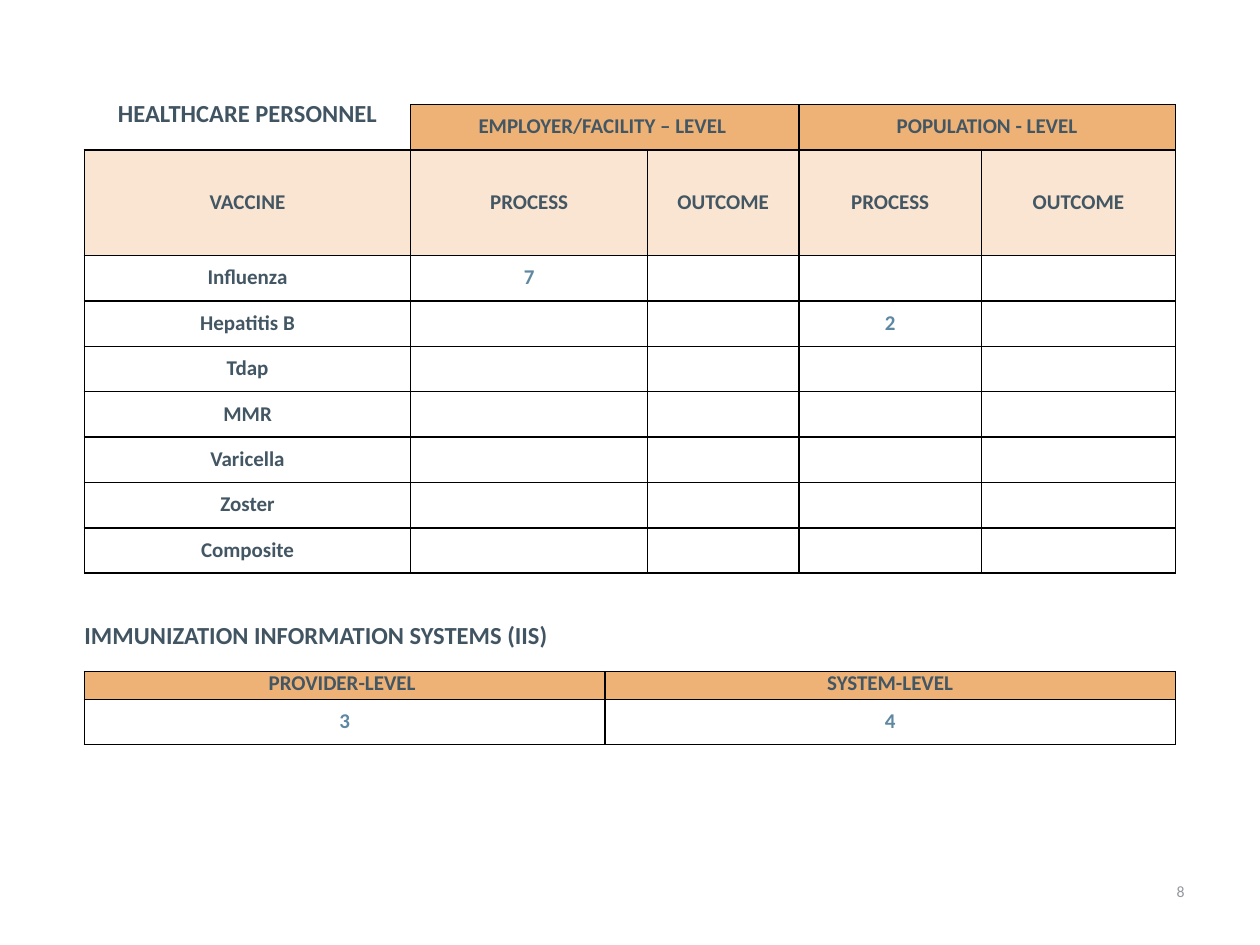
"""Build the slide of vaccine measures for healthcare personnel and information systems."""
from dataclasses import dataclass

import pptx
import pptx.dml.color
import pptx.enum.text
import pptx.oxml
import pptx.oxml.ns
import pptx.util

Inches = pptx.util.Inches
Pt = pptx.util.Pt
RGBColor = pptx.dml.color.RGBColor
ALIGN = pptx.enum.text.PP_ALIGN
ANCHOR = pptx.enum.text.MSO_ANCHOR

HEADING = RGBColor(0x41, 0x54, 0x62)
LABEL = RGBColor(0x43, 0x56, 0x63)
COUNT = RGBColor(0x5E, 0x88, 0xA2)
PAGE_GRAY = RGBColor(0x93, 0x99, 0x9E)
ORANGE = RGBColor(0xEE, 0xB2, 0x76)
PEACH = RGBColor(0xF9, 0xE5, 0xD1)
BLACK = RGBColor(0, 0, 0)

LEFT = 0.67
ROW_HEIGHT = 0.36
VACCINES = ("Influenza", "Hepatitis B", "Tdap", "MMR", "Varicella", "Zoster", "Composite")
MEASURES = ("PROCESS", "OUTCOME")


@dataclass(frozen=True)
class Grid:
    top: float
    columns: tuple[float, ...]
    heights: tuple[float, ...]
    rows: tuple[tuple[str, ...], ...]
    fills: tuple[RGBColor, ...]


PERSONNEL = Grid(
    top=0.83,
    columns=(2.59, 1.88, 1.2, 1.45, 1.54),
    heights=(ROW_HEIGHT, 0.84) + (ROW_HEIGHT,) * len(VACCINES),
    rows=(
        ("HEALTHCARE PERSONNEL", "EMPLOYER/FACILITY – LEVEL ", "", "POPULATION - LEVEL", ""),
        ("VACCINE", *MEASURES, *MEASURES),
        ("Influenza", "7", "", "", ""),
        ("Hepatitis B", "", "", "2", ""),
        *((vaccine, "", "", "", "") for vaccine in VACCINES[2:]),
    ),
    fills=(ORANGE, PEACH),
)
SYSTEMS = Grid(
    top=5.33,
    columns=(4.13, 4.53),
    heights=(0.22, ROW_HEIGHT),
    rows=(("PROVIDER-LEVEL ", "SYSTEM-LEVEL"), ("3", "4")),
    fills=(ORANGE,),
)


def write(frame, text: str, *, size: float = 12, color: RGBColor = LABEL, bold: bool = True,
          align=ALIGN.CENTER, spacing: float | None = None) -> None:
    """Write one formatted paragraph into a text frame."""
    paragraph = frame.paragraphs[0]
    paragraph.alignment = align
    if spacing:
        paragraph.line_spacing = Pt(spacing)
    run = paragraph.add_run()
    run.text = text
    run.font.name = "Calibri"
    run.font.size = Pt(size)
    run.font.bold = bold
    run.font.color.rgb = color


def add_label(slide, text: str, box: tuple[float, float, float, float], *,
              insets: tuple[float, float, float, float], wrap: bool, **style) -> None:
    """Add a text box with left, top, right and bottom insets."""
    frame = slide.shapes.add_textbox(*map(Inches, box)).text_frame
    frame.word_wrap = wrap
    frame.vertical_anchor = ANCHOR.TOP
    frame.margin_left, frame.margin_top, frame.margin_right, frame.margin_bottom = map(Inches, insets)
    write(frame, text, **style)


def set_borders(cell, sides: str) -> None:
    """Draw one-point black lines on the named sides of a cell."""
    properties = cell._tc.get_or_add_tcPr()
    for index, side in enumerate(sides):
        properties.insert(index, pptx.oxml.parse_xml(
            f'<a:ln{side} {pptx.oxml.ns.nsdecls("a")} w="{Pt(1)}"><a:solidFill>'
            f'<a:srgbClr val="{BLACK}"/></a:solidFill></a:ln{side}>'))


def add_grid(slide, grid: Grid):
    """Add a bordered table and return it."""
    size = len(grid.rows), len(grid.columns)
    table = slide.shapes.add_table(
        *size, Inches(LEFT), Inches(grid.top),
        Inches(sum(grid.columns)), Inches(sum(grid.heights))).table
    table.first_row = table.horz_banding = False
    for column, width in zip(table.columns, grid.columns):
        column.width = Inches(width)
    for row, height in zip(table.rows, grid.heights):
        row.height = Inches(height)
    for r, texts in enumerate(grid.rows):
        for c, text in enumerate(texts):
            cell = table.cell(r, c)
            is_title = grid is PERSONNEL and r == c == 0
            at_top = is_title or (grid is SYSTEMS and r == 0)
            cell.vertical_anchor = ANCHOR.TOP if at_top else ANCHOR.MIDDLE
            cell.margin_left = cell.margin_right = Inches(0.07)
            cell.margin_top = cell.margin_bottom = 0
            if r < len(grid.fills) and not is_title:
                cell.fill.solid()
                cell.fill.fore_color.rgb = grid.fills[r]
            else:
                cell.fill.background()
            set_borders(cell, "RB" if is_title else "LRTB")
            if text:
                color = HEADING if is_title else COUNT if text.isdigit() else LABEL
                write(cell.text_frame, text, size=14 if is_title else 12, color=color, spacing=14)
    return table


def main() -> None:
    """Build and save the slide."""
    deck = pptx.Presentation()
    deck.slide_width, deck.slide_height = Inches(10), Inches(7.5)
    slide = deck.slides.add_slide(deck.slide_layouts[6])
    add_label(slide, "8", (7.17, 6.95, 2.33, 0.4), insets=(0.1, 0.05, 0.1, 0.05), wrap=True,
              size=9, color=PAGE_GRAY, bold=False, align=ALIGN.RIGHT)
    personnel = add_grid(slide, PERSONNEL)
    for first in (1, 3):
        personnel.cell(0, first).merge(personnel.cell(0, first + 1))
    add_grid(slide, SYSTEMS)
    add_label(slide, "IMMUNIZATION INFORMATION SYSTEMS (IIS)", (LEFT, 4.84, 3.71, 0.66),
              insets=(0, 0.08, 0, 0.04), wrap=False, size=14, color=HEADING, align=ALIGN.LEFT)
    deck.save("out.pptx")


if __name__ == "__main__":
    main()
